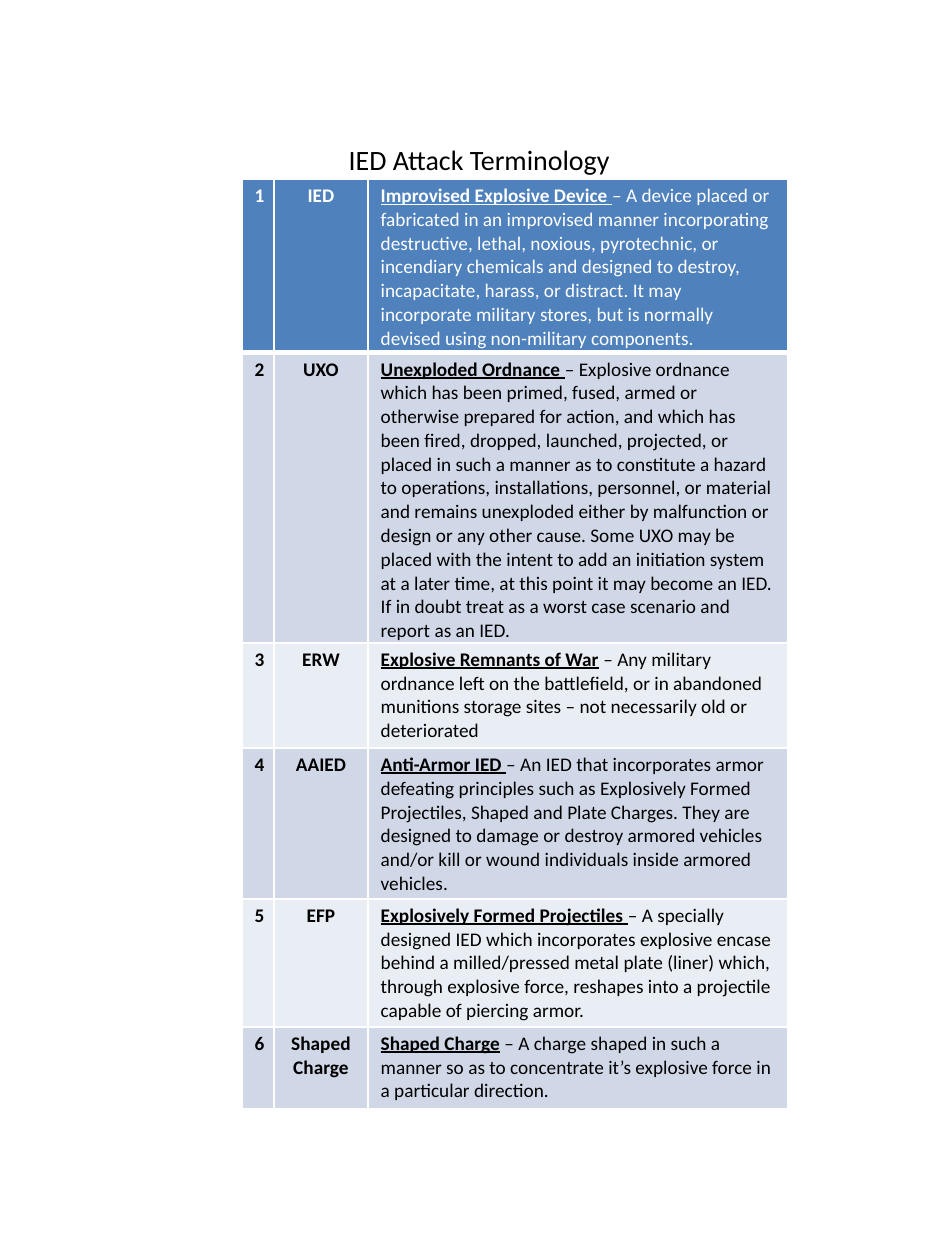
from dataclasses import dataclass

import lxml.etree
import pptx
import pptx.dml.color
import pptx.enum.text
import pptx.oxml.ns
import pptx.util

Cm = pptx.util.Cm
Pt = pptx.util.Pt
PP_ALIGN = pptx.enum.text.PP_ALIGN
qn = pptx.oxml.ns.qn

FONT = "Calibri"
WHITE, BLACK = "FFFFFF", "000000"
HEADER_FILL = "4F81BD"
BAND_FILLS = ("E9EDF4", "D0D8E8")
COLUMN_WIDTHS = (0.64, 1.9, 8.46)


@dataclass
class Term:
    abbreviation: str
    name: str
    definition: str
    height: float


TERMS = [
    Term("IED", "Improvised Explosive Device ",
         "– A device placed or fabricated in an improvised manner incorporating "
         "destructive, lethal, noxious, pyrotechnic, or incendiary chemicals and "
         "designed to destroy, incapacitate, harass, or distract. It may incorporate "
         "military stores, but is normally devised using non-military components.", 3.5),
    Term("UXO", "Unexploded Ordnance ",
         "– Explosive ordnance which has been primed, fused, armed or otherwise "
         "prepared for action, and which has been fired, dropped, launched, projected, "
         "or placed in such a manner as to constitute a hazard to operations, "
         "installations, personnel, or material and remains unexploded either by "
         "malfunction or design or any other cause. Some UXO may be placed with the "
         "intent to add an initiation system at a later time, at this point it may "
         "become an IED. If in doubt treat as a worst case scenario and report as an "
         "IED.", 5.84),
    Term("ERW", "Explosive Remnants of War",
         " – Any military ordnance left on the battlefield, or in abandoned munitions "
         "storage sites – not necessarily old or deteriorated", 2.12),
    Term("AAIED", "Anti-Armor IED ",
         "– An IED that incorporates armor defeating principles such as Explosively "
         "Formed Projectiles, Shaped and Plate Charges. They are designed to damage or "
         "destroy armored vehicles and/or kill or wound individuals inside armored "
         "vehicles.", 3.04),
    Term("EFP", "Explosively Formed Projectiles ",
         "– A specially designed IED which incorporates explosive encase behind a "
         "milled/pressed metal plate (liner) which, through explosive force, reshapes "
         "into a projectile capable of piercing armor.", 2.58),
    Term("Shaped Charge", "Shaped Charge",
         " – A charge shaped in such a manner so as to concentrate it’s explosive force "
         "in a particular direction.", 1.65),
]


def rgb(color: str) -> pptx.dml.color.RGBColor:
    return pptx.dml.color.RGBColor.from_string(color)


def format_run(r, size: float, color: str, bold: bool = False, underline: bool = False) -> None:
    r.font.name = FONT
    r.font.size = Pt(size)
    r.font.bold = bold
    r.font.underline = underline
    r.font.color.rgb = rgb(color)


def set_borders(cell, top: float, bottom: float) -> None:
    props = cell._tc.get_or_add_tcPr()
    widths = {"a:lnL": 1, "a:lnR": 1, "a:lnT": top, "a:lnB": bottom}
    for i, (tag, width) in enumerate(widths.items()):
        ln = lxml.etree.Element(qn(tag), w=str(Pt(width)))
        fill = lxml.etree.SubElement(ln, qn("a:solidFill"))
        lxml.etree.SubElement(fill, qn("a:srgbClr"), val=WHITE)
        props.insert(i, ln)


def fill_row(table, index: int, term: Term) -> None:
    header = index == 0
    color = WHITE if header else BLACK
    table.rows[index].height = Cm(term.height)
    texts = (str(index + 1), term.abbreviation, term.name)
    for column, text in enumerate(texts):
        cell = table.cell(index, column)
        cell.fill.solid()
        cell.fill.fore_color.rgb = rgb(HEADER_FILL if header else BAND_FILLS[index % 2])
        cell.margin_top, cell.margin_bottom = Cm(0.1), Cm(0)
        set_borders(cell, top=3 if index == 1 else 1, bottom=3 if header else 1)
        p = cell.text_frame.paragraphs[0]
        p.text = text
        is_definition = column == 2
        p.alignment = PP_ALIGN.LEFT if is_definition else PP_ALIGN.CENTER
        format_run(p.runs[0], 11, color, bold=True, underline=is_definition)
        if is_definition:
            r = p.add_run()
            r.text = term.definition
            format_run(r, 11, color)


def add_terms_table(s) -> None:
    height = sum(term.height for term in TERMS)
    table = s.shapes.add_table(len(TERMS), len(COLUMN_WIDTHS), Cm(4.88), Cm(3.61),
                               Cm(sum(COLUMN_WIDTHS)), Cm(height)).table
    for column, width in zip(table.columns, COLUMN_WIDTHS):
        column.width = Cm(width)
    for index, term in enumerate(TERMS):
        fill_row(table, index, term)


def add_title(s, text: str) -> None:
    tf = s.shapes.add_textbox(Cm(6.78), Cm(2.74), Cm(6.4), Cm(0.94)).text_frame
    tf.word_wrap = True
    tf.text = text
    format_run(tf.paragraphs[0].runs[0], 16, BLACK)


def main() -> None:
    prs = pptx.Presentation()
    prs.slide_width, prs.slide_height = Cm(19.05), Cm(25.4)
    s = prs.slides.add_slide(prs.slide_layouts[6])
    add_terms_table(s)
    add_title(s, "IED Attack Terminology")
    prs.save("out.pptx")


if __name__ == "__main__":
    main()
